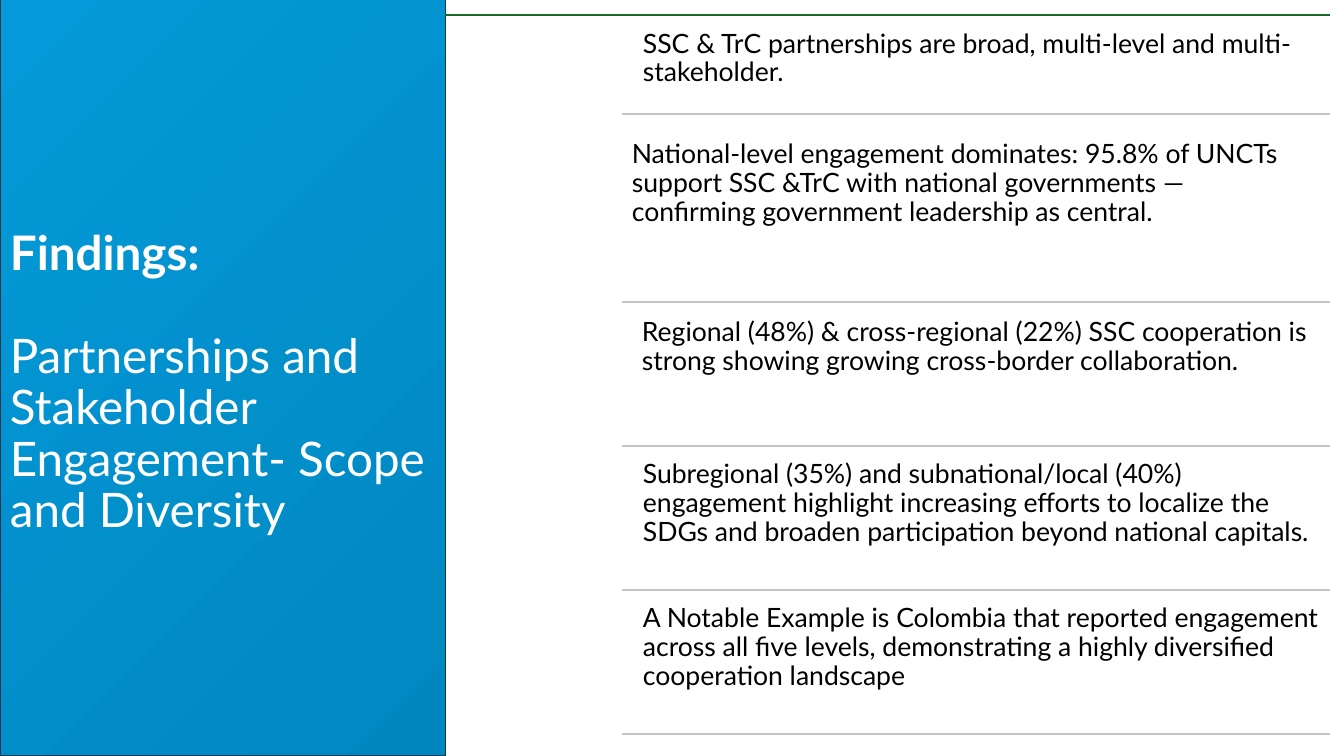
from dataclasses import dataclass

import pptx
import pptx.dml.color
import pptx.enum.shapes
import pptx.enum.text
import pptx.oxml
import pptx.oxml.ns
import pptx.util
from pptx.dml.color import RGBColor
from pptx.util import Pt

WHITE = RGBColor(0xFF, 0xFF, 0xFF)
BLACK = RGBColor(0x00, 0x00, 0x00)
PANEL_LIGHT = RGBColor(0x04, 0x9A, 0xD9)
PANEL_DARK = RGBColor(0x00, 0x87, 0xC0)
PANEL_EDGE = RGBColor(0x0A, 0x3A, 0x52)
GREEN = RGBColor(0x19, 0x6B, 0x24)
GREY = RGBColor(0xBD, 0xC7, 0xBE)

SLIDE_WIDTH, SLIDE_HEIGHT = 960, 540
PANEL_WIDTH = 318.2
DIVIDER_LEFT, DIVIDER_RIGHT = 444.2, 949.7
FINDING_WIDTH, FINDING_HEIGHT = 496, 98
TITLE_LINE = 36.7

TITLE_FONT = {"name": "Lato", "size": Pt(34), "color": WHITE}
FINDING_FONT = {"name": "Lato", "size": Pt(19), "color": BLACK}


@dataclass(frozen=True)
class Finding:
    text: str
    left: float
    top: float
    divider_below: float


FINDINGS = [
    Finding("SSC & TrC partnerships are broad, multi‑level and multi- stakeholder.",
            453.6, 15.8, 81.4),
    Finding("National-level engagement dominates: 95.8% of UNCTs support SSC &TrC "
            "with national governments — confirming government leadership as central.",
            445.7, 95, 216),
    Finding("Regional (48%) & cross-regional (22%) SSC cooperation is strong "
            "showing growing cross‑border collaboration.",
            452.9, 221.8, 318.5),
    Finding("Subregional (35%) and subnational/local (40%) engagement highlight "
            "increasing efforts to localize the SDGs and broaden participation "
            "beyond national capitals.",
            453.6, 323.3, 421.3),
    Finding("A Notable Example is Colombia that reported engagement across all five "
            "levels, demonstrating a highly diversified cooperation landscape",
            453.6, 426.2, 524.2),
]


def apply_format(target, values: dict) -> None:
    for attribute, value in values.items():
        if attribute == "color":
            target.color.rgb = value
        else:
            setattr(target, attribute, value)


def write_paragraph(paragraph, text: str, font: dict, space_before: float = 0) -> None:
    apply_format(paragraph, {"line_spacing": 0.9,
                             "alignment": pptx.enum.text.PP_ALIGN.LEFT})
    if space_before:
        paragraph.space_before = Pt(space_before)
    run = paragraph.add_run()
    run.text = text
    apply_format(run.font, font)


def set_frame(frame, side: float, top: float, bottom: float) -> None:
    apply_format(frame, {"word_wrap": True,
                         "vertical_anchor": pptx.enum.text.MSO_ANCHOR.TOP,
                         "margin_left": Pt(side), "margin_right": Pt(side),
                         "margin_top": Pt(top), "margin_bottom": Pt(bottom)})


def draw_title_panel(slide) -> None:
    panel = slide.shapes.add_shape(pptx.enum.shapes.MSO_SHAPE.RECTANGLE, Pt(0), Pt(0),
                                   Pt(PANEL_WIDTH), Pt(SLIDE_HEIGHT))
    panel.shadow.inherit = False
    panel.fill.gradient()
    panel.fill.gradient_angle = 315
    for stop, color in zip(panel.fill.gradient_stops, (PANEL_LIGHT, PANEL_DARK)):
        stop.color.rgb = color
    apply_format(panel.line, {"color": PANEL_EDGE, "width": Pt(0.75)})

    frame = panel.text_frame
    set_frame(frame, 7.2, 164, 3.6)
    write_paragraph(frame.paragraphs[0], "Findings:", TITLE_FONT | {"bold": True})
    write_paragraph(frame.add_paragraph(),
                    "Partnerships and Stakeholder Engagement- Scope and Diversity",
                    TITLE_FONT, TITLE_LINE)


def draw_divider(slide, left: float, y: float, color: RGBColor) -> None:
    divider = slide.shapes.add_connector(pptx.enum.shapes.MSO_CONNECTOR.STRAIGHT,
                                         Pt(left), Pt(y), Pt(DIVIDER_RIGHT), Pt(y))
    apply_format(divider.line, {"color": color, "width": Pt(1.5)})
    properties = divider._element.spPr
    properties.append(pptx.oxml.parse_xml(
        f"<a:effectLst {pptx.oxml.ns.nsdecls('a')}/>"))


def draw_finding(slide, finding: Finding) -> None:
    box = slide.shapes.add_textbox(Pt(finding.left), Pt(finding.top),
                                   Pt(FINDING_WIDTH), Pt(FINDING_HEIGHT))
    set_frame(box.text_frame, 5.7, 5.7, 5.7)
    write_paragraph(box.text_frame.paragraphs[0], finding.text, FINDING_FONT)
    draw_divider(slide, DIVIDER_LEFT, finding.divider_below, GREY)


def main() -> None:
    presentation = pptx.Presentation()
    apply_format(presentation, {"slide_width": Pt(SLIDE_WIDTH),
                                "slide_height": Pt(SLIDE_HEIGHT)})
    slide = presentation.slides.add_slide(presentation.slide_layouts[6])
    draw_title_panel(slide)
    draw_divider(slide, PANEL_WIDTH, 10.8, GREEN)
    for finding in FINDINGS:
        draw_finding(slide, finding)
    presentation.save("out.pptx")


if __name__ == "__main__":
    main()
